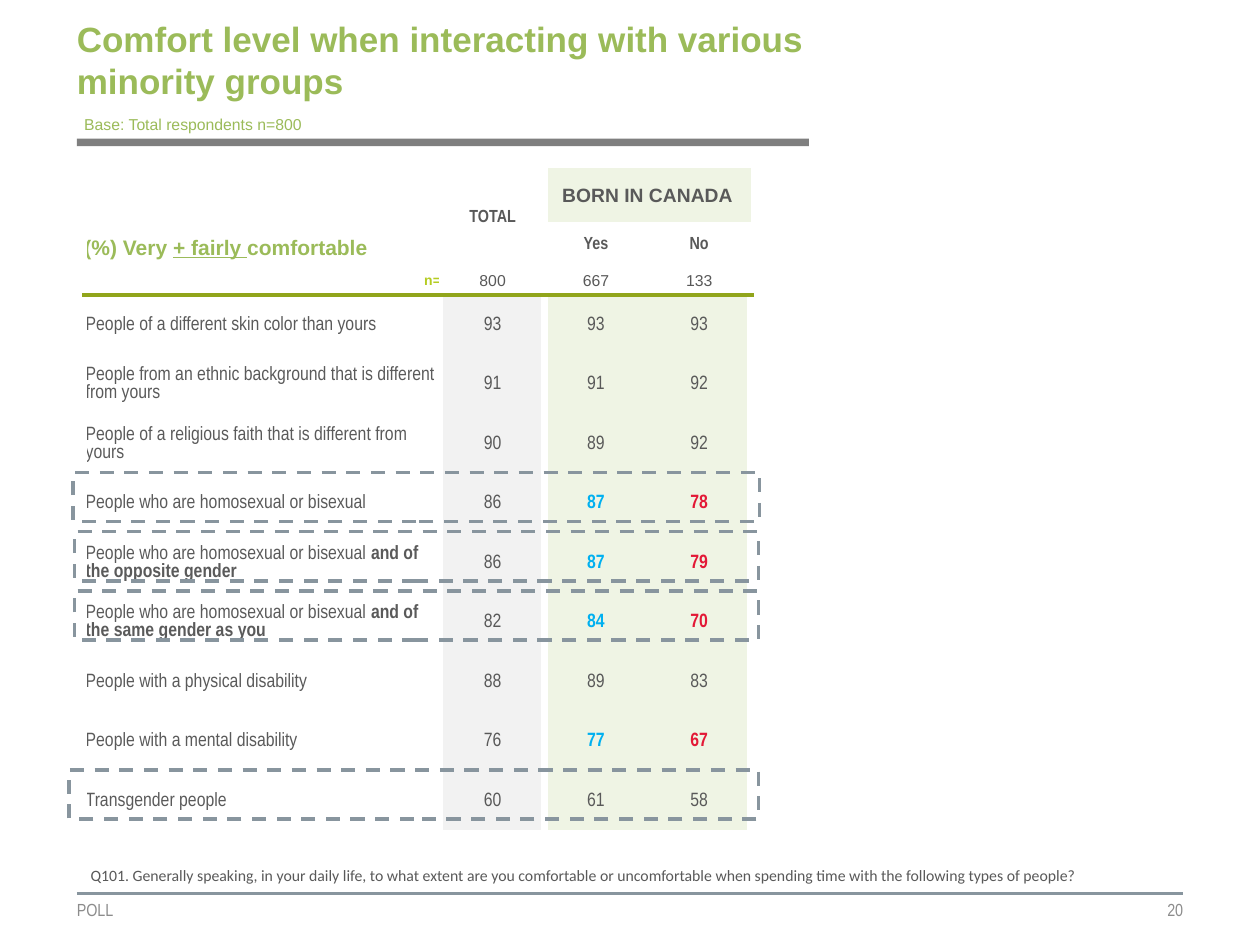
from dataclasses import dataclass
from typing import NamedTuple

from lxml.etree import SubElement
from pptx import Presentation
from pptx.dml.color import RGBColor
from pptx.enum.dml import MSO_LINE
from pptx.enum.shapes import MSO_CONNECTOR, MSO_SHAPE
from pptx.enum.text import MSO_ANCHOR, PP_ALIGN
from pptx.oxml import parse_xml
from pptx.oxml.ns import nsdecls, qn
from pptx.util import Inches, Pt


@dataclass(frozen=True)
class Theme:
    sans: str = "Arial"
    narrow: str = "Arial Narrow"
    note: str = "Calibri"
    green: str = "9BBB59"
    lime: str = "B5CC22"
    olive: str = "91A51B"
    pale: str = "EFF4E4"
    light: str = "F2F2F2"
    white: str = "FFFFFF"
    bar: str = "7F7F7F"
    slate: str = "88959E"
    muted: str = "8C8C8C"
    dark: str = "595959"
    label: str = "5A5A5A"
    high: str = "00B0F0"
    low: str = "E31836"
    title: int = 20
    head: int = 12
    body: int = 11
    small: int = 10
    tiny: int = 9
    mini: int = 8


class Group(NamedTuple):
    label: str
    total: int
    yes: int
    no: int
    bold: str = ""
    differs: bool = False


class Box(NamedTuple):
    left: float
    top: float
    width: float
    height: float


T = Theme()
SAME = "People who are homosexual or bisexual"
GROUPS = [
    Group("People of a different skin color than yours", 93, 93, 93),
    Group("People from an ethnic background that is different from yours", 91, 91, 92),
    Group("People of a religious faith that is different from yours", 90, 89, 92),
    Group(SAME, 86, 87, 78, differs=True),
    Group(SAME + " ", 86, 87, 79, "and of the opposite gender", True),
    Group(SAME + " ", 82, 84, 70, "and of the same gender as you", True),
    Group("People with a physical disability", 88, 89, 83),
    Group("People with a mental disability", 76, 77, 67, differs=True),
    Group("Transgender people", 60, 61, 58),
]
HEADS = [0.24, 0.19, 0.35, 0.22]
PITCH = 4.25 / len(GROUPS)
COLS = [2.83, 0.82, 0.82, 0.82]
FRAMES = [Box(0.58, 3.75, 5.45, 0.39), Box(0.59, 4.22, 5.43, 0.39),
          Box(0.59, 4.69, 5.43, 0.39), Box(0.55, 6.11, 5.47, 0.39)]


def place(box: Box) -> list:
    return [Inches(n) for n in box]


def write(frame, text: str, *, size: float, font: str = T.sans, color: str = T.dark,
          bold: bool = False, under: bool = False, align=PP_ALIGN.LEFT,
          spacing: float = 1) -> None:
    """Add a run to the frame's last paragraph."""
    para = frame.paragraphs[-1]
    para.alignment = align
    para.line_spacing = spacing
    run = para.add_run()
    run.text = text
    style = run.font
    style.name, style.size = font, Pt(size)
    style.bold, style.underline = bold, under
    style.color.rgb = RGBColor.from_string(color)


def pad(item, left: float, top: float, right: float, bottom: float) -> None:
    item.margin_left, item.margin_top = Inches(left), Inches(top)
    item.margin_right, item.margin_bottom = Inches(right), Inches(bottom)


def panel(slide, box: Box, text: str, inset=(0, 0, 0, 0), wrap: bool = True,
          anchor=MSO_ANCHOR.MIDDLE, **form) -> None:
    frame = slide.shapes.add_textbox(*place(box)).text_frame
    frame.word_wrap = wrap
    frame.vertical_anchor = anchor
    pad(frame, *inset)
    write(frame, text, **form)


def rect(slide, box: Box, fill: str = "", dash: str = "") -> None:
    shape = slide.shapes.add_shape(MSO_SHAPE.RECTANGLE, *place(box))
    shape.shadow.inherit = False
    if fill:
        shape.fill.solid()
        shape.fill.fore_color.rgb = RGBColor.from_string(fill)
    else:
        shape.fill.background()
    if dash:
        shape.line.color.rgb = RGBColor.from_string(dash)
        shape.line.width = Pt(2)
        shape.line.dash_style = MSO_LINE.DASH
    else:
        shape.line.fill.background()


def rule(slide, left: float, right: float, top: float) -> None:
    line = slide.shapes.add_connector(
        MSO_CONNECTOR.STRAIGHT, Inches(left), Inches(top), Inches(right), Inches(top))
    line.line.color.rgb = RGBColor.from_string(T.slate)
    line.line.width = Pt(1.5)
    SubElement(line.element.spPr, qn("a:effectLst"))


def edge(cell, **sides: tuple[str, float]) -> None:
    """Set all borders: L, R, T, B as colour and points; a side not given is clear."""
    props = cell._tc.get_or_add_tcPr()
    for spot, side in enumerate("LRTB"):
        color, width = sides.get(side, ("", 0))
        paint = f'<a:solidFill><a:srgbClr val="{color}"/></a:solidFill>' if color else "<a:noFill/>"
        props.insert(spot, parse_xml(
            f'<a:ln{side} {nsdecls("a")} w="{Pt(width)}">{paint}</a:ln{side}>'))


def enter(cell, text: str, inset=(0.01, 0.01, 0.01, 0), fill: str = "",
          anchor=MSO_ANCHOR.MIDDLE, **form) -> None:
    pad(cell, *inset)
    cell.vertical_anchor = anchor
    if fill:
        cell.fill.solid()
        cell.fill.fore_color.rgb = RGBColor.from_string(fill)
    write(cell.text_frame, text, **{"align": PP_ALIGN.CENTER, **form})


def header(grid) -> None:
    for first, last in (((0, 1), (2, 1)), ((0, 2), (1, 3)), ((1, 0), (2, 0))):
        grid.cell(*first).merge(grid.cell(*last))
    name = dict(size=T.small, font=T.narrow, bold=True)
    enter(grid.cell(0, 1), "TOTAL", **name)
    enter(grid.cell(2, 2), "Yes", **name)
    enter(grid.cell(2, 3), "No", **name)
    enter(grid.cell(0, 2), "BORN IN CANADA", fill=T.pale, size=T.body, bold=True)
    lead = grid.cell(1, 0)
    form = dict(size=T.head, color=T.green, bold=True, spacing=0.95)
    enter(lead, "(%) Very ", (0, 0.05, 0, 0.05), anchor=MSO_ANCHOR.BOTTOM,
          align=PP_ALIGN.LEFT, **form)
    write(lead.text_frame, "+ fairly ", under=True, **form)
    write(lead.text_frame, "comfortable", **form)
    enter(grid.cell(3, 0), "n=", (0, 0.05, 0, 0.05), size=T.mini, color=T.lime,
          bold=True, align=PP_ALIGN.RIGHT, spacing=0.95)
    for col, count in enumerate((800, 667, 133), 1):
        enter(grid.cell(3, col), str(count), size=T.tiny)


def fill_row(grid, row: int, group: Group) -> None:
    form = dict(size=T.body, font=T.narrow)
    cell = grid.cell(row, 0)
    enter(cell, group.label, color=T.label, align=PP_ALIGN.LEFT, **form)
    if group.bold:
        write(cell.text_frame, group.bold, color=T.label, bold=True, **form)
    yes, no = (T.high, T.low) if group.differs else (T.dark, T.dark)
    shown = ((group.total, T.light, T.dark), (group.yes, T.pale, yes), (group.no, T.pale, no))
    for col, (value, fill, color) in enumerate(shown, 1):
        enter(grid.cell(row, col), str(value), fill=fill, color=color,
              bold=color != T.dark, **form)


def table(slide) -> None:
    heights = HEADS + [PITCH] * len(GROUPS)
    box = Box(0.67, 1.33, sum(COLS), sum(heights))
    frame = slide.shapes.add_table(len(heights), len(COLS), *place(box))
    grid = frame.table
    grid.first_row = grid.horz_banding = False
    for style in frame.element.iter(qn("a:tableStyleId")):
        style.text = "{2D5ABB26-0587-4C30-8999-92F81FD0307C}"
    for col, width in zip(grid.columns, COLS):
        col.width = Inches(width)
    for row, height in zip(grid.rows, heights):
        row.height = Inches(height)
    for cell in grid.iter_cells():
        pad(cell, 0, 0, 0, 0)
        cell.fill.background()
        para = cell.text_frame.paragraphs[0]
        SubElement(para._p, qn("a:endParaRPr"), sz=str(T.mini * 100))
    header(grid)
    for row, group in enumerate(GROUPS, len(HEADS)):
        fill_row(grid, row, group)
    thin, thick, green = (T.white, 3), (T.white, 4.5), (T.olive, 3)
    sides = [dict(L=thin, R=thin), dict(L=thin, R=thick), dict(L=thick), dict(R=thick)]
    last = len(HEADS) - 1
    for row in range(len(heights)):
        extra = {last: {"B": green}, last + 1: {"T": green}}.get(row, {})
        for col, side in enumerate(sides):
            edge(grid.cell(row, col), **side, **extra)


def main() -> None:
    deck = Presentation()
    deck.slide_width, deck.slide_height = Inches(10), Inches(7.5)
    slide = deck.slides.add_slide(deck.slide_layouts[6])
    rule(slide, 0.61, 9.39, 7.09)
    rect(slide, Box(0.61, 1.1, 5.81, 0.06), fill=T.bar)
    foot = dict(size=T.small, font=T.narrow, color=T.muted)
    panel(slide, Box(0.61, 7.09, 2.8, 0.26), "POLL", **foot)
    panel(slide, Box(6.55, 7.09, 2.84, 0.26), "20", align=PP_ALIGN.RIGHT, **foot)
    panel(slide, Box(0.61, 0.41, 5.96, 0.69),
          "Comfort level when interacting with various minority groups",
          (0, 0, 0, 0.57), size=T.title, color=T.green, bold=True)
    table(slide)
    for box in FRAMES:
        rect(slide, box, dash=T.slate)
    panel(slide, Box(0.57, 0.86, 1.95, 0.25), "Base: Total respondents n=800",
          (0.1, 0.05, 0.1, 0.05), wrap=False, anchor=MSO_ANCHOR.TOP,
          size=T.tiny, color=T.green)
    panel(slide, Box(0.62, 6.67, 8.81, 0.4),
          "Q101. Generally speaking, in your daily life, to what extent are you comfortable "
          "or uncomfortable when spending time with the following types of people?",
          (0.1, 0.2, 0.1, 0.05), anchor=MSO_ANCHOR.TOP, size=T.tiny, font=T.note)
    deck.save("out.pptx")


if __name__ == "__main__":
    main()
